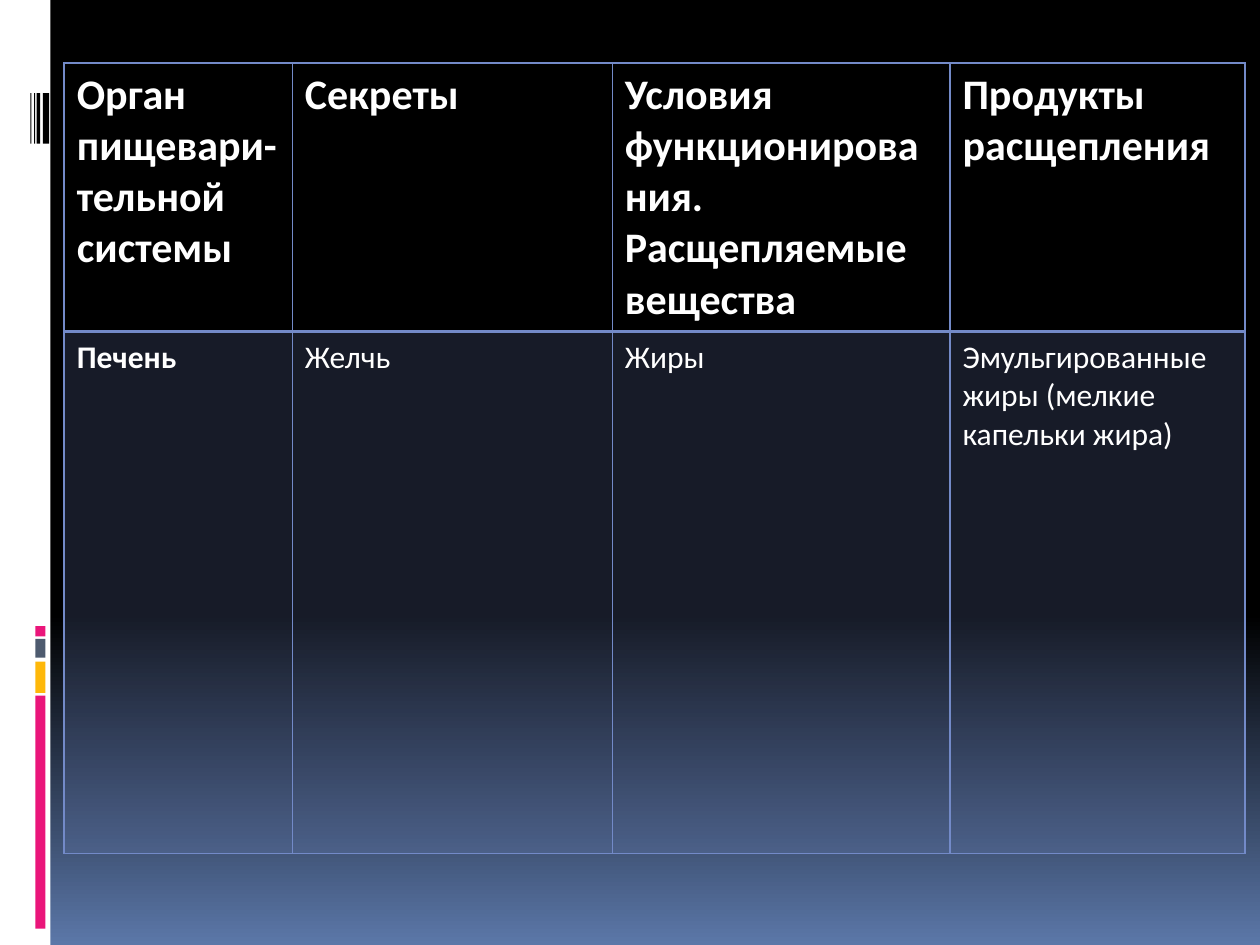
from copy import deepcopy
from dataclasses import dataclass

from lxml.etree import SubElement
from pptx import Presentation
from pptx.dml.color import RGBColor as RGB
from pptx.enum.shapes import MSO_SHAPE as SHAPE
from pptx.oxml.ns import qn
from pptx.util import Inches, Pt


@dataclass(frozen=True)
class Theme:
    font: str = "Calibri"
    head_size: int = 24
    body_size: int = 18
    black: str = "000000"
    white: str = "FFFFFF"
    horizon: str = "5B77A8"
    pink: str = "EA157A"
    amber: str = "FEB80A"
    slate: str = "4E5B6F"
    grid: str = "738AC8"
    tint: int = 20


class SlideBuilder:
    def __init__(self, slide, theme):
        self.s = slide
        self.theme = theme

    def background(self, stops, angle):
        """Fill the slide with a linear gradient of (percent, colour) stops."""
        fill = self.s.background.fill
        fill.gradient()
        fill.gradient_angle = angle
        gs_list = self.s.element.find(".//" + qn("a:gsLst"))
        while len(gs_list) < len(stops):
            gs_list.append(deepcopy(gs_list[0]))
        for gs, stop, (percent, color) in zip(gs_list, fill.gradient_stops, stops):
            gs.set("pos", str(percent * 1000))
            stop.color.rgb = RGB.from_string(color)

    def bar(self, left, top, width, height, color):
        sp = self.s.shapes.add_shape(
            SHAPE.RECTANGLE, Inches(left), Inches(top), Inches(width), Inches(height))
        sp.shadow.inherit = False
        sp.fill.solid()
        sp.fill.fore_color.rgb = RGB.from_string(color)
        sp.line.fill.background()

    def table(self, left, top, widths, heights, rows):
        frame = self.s.shapes.add_table(
            len(rows), len(widths), Inches(left), Inches(top),
            Inches(sum(widths)), Inches(sum(heights)))
        table = frame.table
        table.first_row = table.horz_banding = False
        for column, width in zip(table.columns, widths):
            column.width = Inches(width)
        for row, height in zip(table.rows, heights):
            row.height = Inches(height)
        for i, texts in enumerate(rows):
            for j, text in enumerate(texts):
                self.cell(table.cell(i, j), text, header=i == 0, bold=i == 0 or j == 0)

    def cell(self, cell, text, header, bold):
        t = self.theme
        cell.text = text
        for p in cell.text_frame.paragraphs:
            p.font.name = t.font
            p.font.size = Pt(t.head_size if header else t.body_size)
            p.font.bold = bold
            p.font.color.rgb = RGB.from_string(t.white)
        rule = "B" if header else "T"
        for side in "LRTB":
            self.border(cell, side, 2 if side == rule else 1)
        if header:
            cell.fill.background()
        else:
            cell.fill.solid()
            cell.fill.fore_color.rgb = RGB.from_string(t.grid)
            tc_pr = cell._tc.get_or_add_tcPr()
            color = tc_pr.find(qn("a:solidFill")).find(qn("a:srgbClr"))
            SubElement(color, qn("a:alpha"), val=str(t.tint * 1000))

    def border(self, cell, side, points):
        """Draw one cell edge; call before filling, as the schema orders them so."""
        tc_pr = cell._tc.get_or_add_tcPr()
        ln = SubElement(tc_pr, qn("a:ln" + side), w=str(Pt(points)))
        fill = SubElement(ln, qn("a:solidFill"))
        SubElement(fill, qn("a:srgbClr"), val=self.theme.grid)


def main():
    prs = Presentation()
    prs.slide_width, prs.slide_height = Inches(10), Inches(7.5)
    t = Theme()
    b = SlideBuilder(prs.slides.add_slide(prs.slide_layouts[6]), t)

    b.background([(0, t.black), (65, t.black), (100, t.horizon)], angle=270)
    b.bar(0, 0, 0.4, 7.5, t.white)
    for top, height, color in [(5.52, 1.85, t.pink), (5.25, 0.25, t.amber),
                               (5.07, 0.15, t.slate), (4.97, 0.08, t.pink)]:
        b.bar(0.28, top, 0.08, height, color)
    for left, width in [(0.34, 0.05), (0.29, 0.03), (0.27, 0.01), (0.24, 0.01)]:
        b.bar(left, 0.74, width, 0.4, t.black)

    b.table(0.51, 0.5, [1.81, 2.54, 2.68, 2.34], [2.13, 4.14], [
        ["Орган пищевари-\nтельной системы", "Секреты",
         "Условия функционирования. Расщепляемые вещества", "Продукты расщепления"],
        ["Печень", "Желчь", "Жиры", "Эмульгированные жиры (мелкие капельки жира)"],
    ])
    prs.save("out.pptx")


if __name__ == "__main__":
    main()
